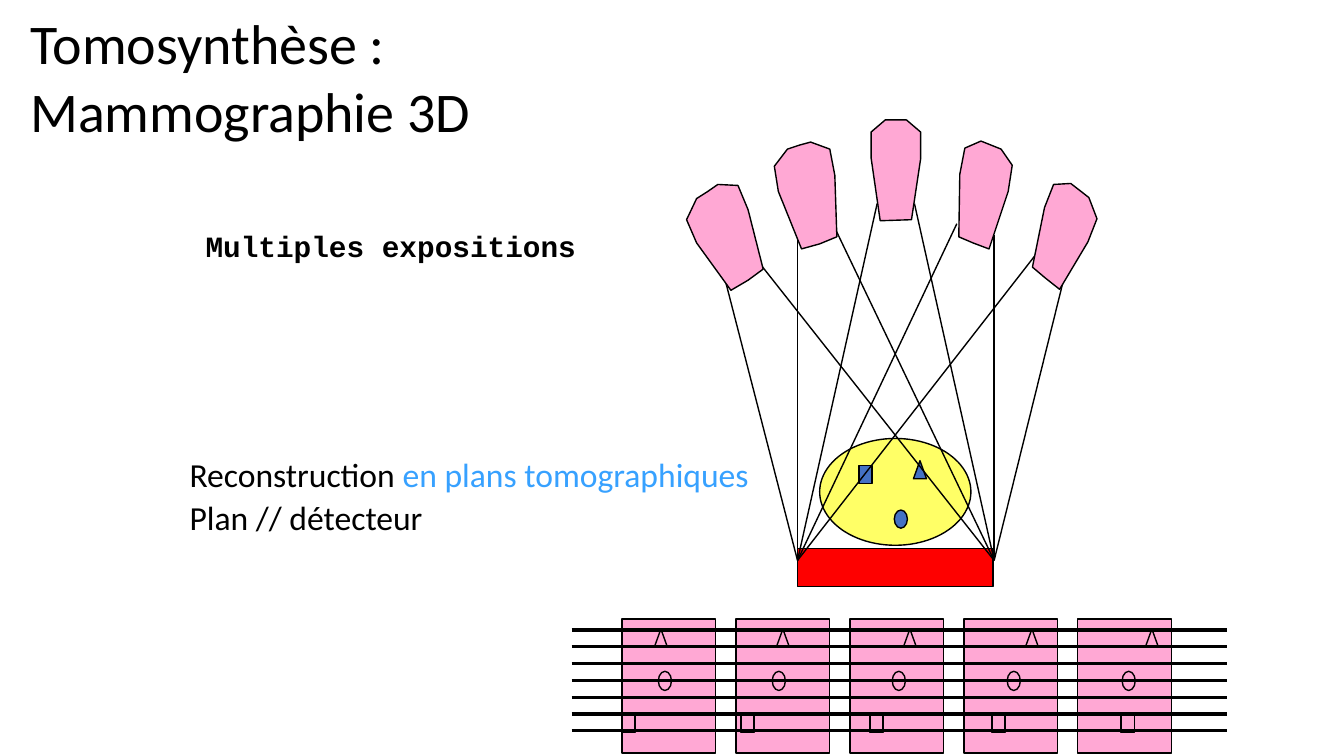
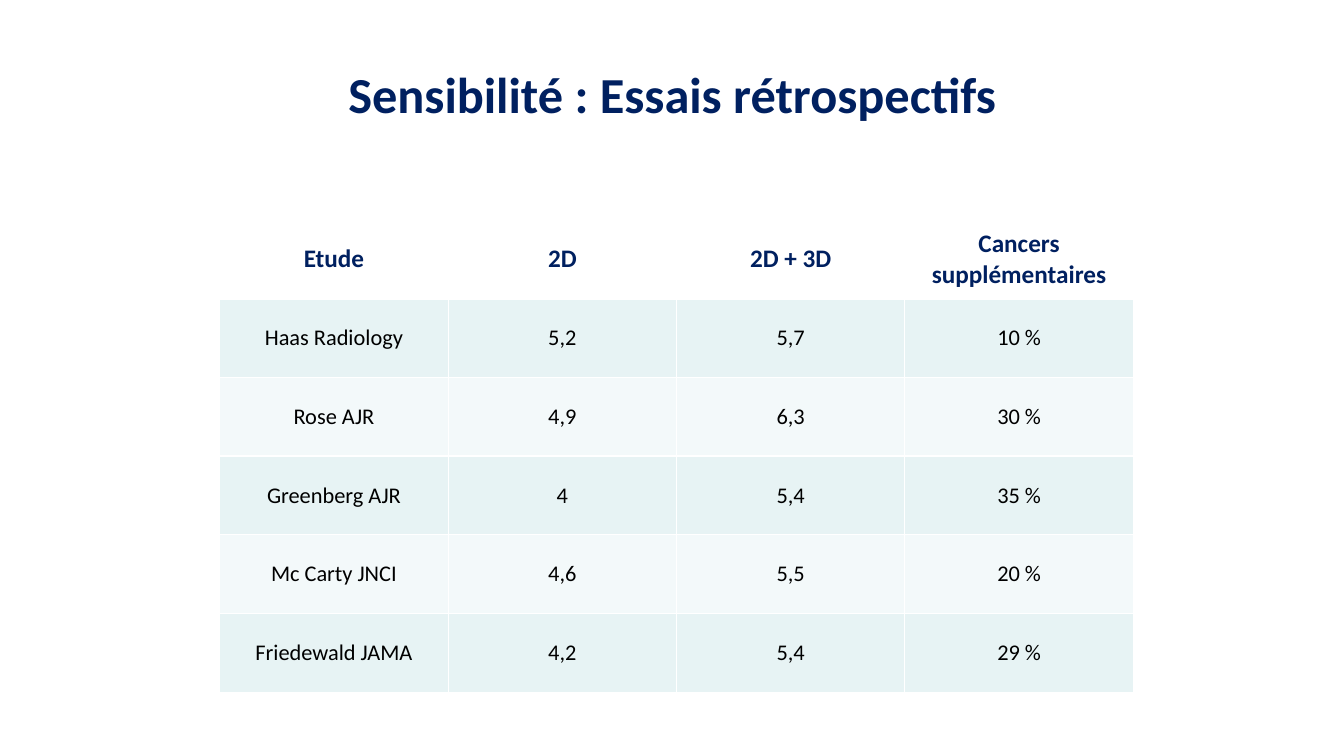
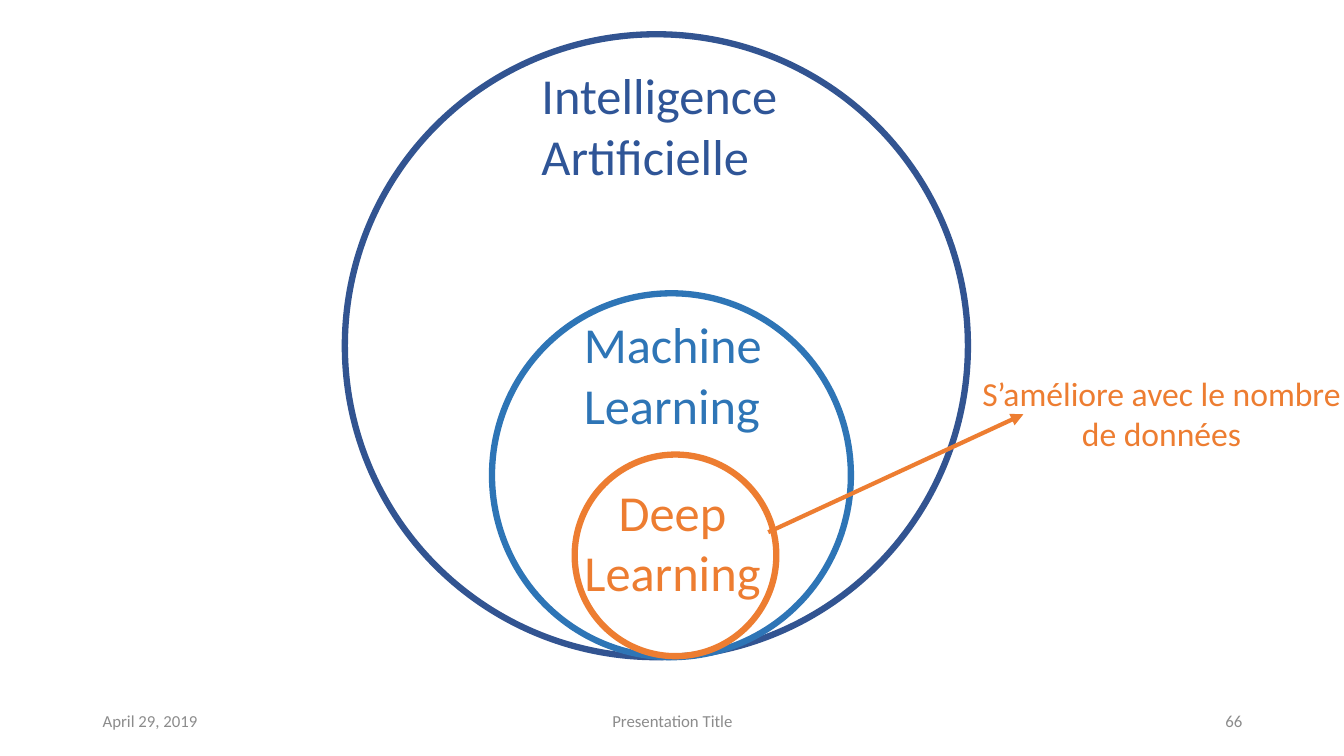
from lxml import etree
from pptx import Presentation
from pptx.dml.color import RGBColor
from pptx.enum.shapes import MSO_CONNECTOR, MSO_SHAPE
from pptx.enum.text import MSO_ANCHOR, MSO_AUTO_SIZE, PP_ALIGN
from pptx.oxml.ns import qn
from pptx.util import Inches, Pt

LEFT, CENTER, RIGHT = PP_ALIGN.LEFT, PP_ALIGN.CENTER, PP_ALIGN.RIGHT
TOP, MIDDLE = MSO_ANCHOR.TOP, MSO_ANCHOR.MIDDLE
RECT, OVAL, TRIANGLE = MSO_SHAPE.RECTANGLE, MSO_SHAPE.OVAL, MSO_SHAPE.ISOSCELES_TRIANGLE
STRAIGHT = MSO_CONNECTOR.STRAIGHT
NO_AUTOFIT = MSO_AUTO_SIZE.NONE

FONT, MONO = "Calibri", "Courier New"
COLORS = {
    "black": "000000", "white": "FFFFFF", "navy": "002060", "sky": "37A1FF",
    "pink": "FFA8D4", "yellow": "FFFF66", "red": "FE0000", "lesion": "4472C4",
    "row_odd": "E7F3F4", "row_even": "F3F9FA", "grey": "8C8C8C",
    "ai_ring": "325491", "ai_text": "2F5597", "ml": "2E75B6", "dl": "ED7D31",
}
TITLE_ONLY, TITLE_BODY, BLANK = 5, 1, 6

EXPOSURES = [
    ([(1.42, 1.78), (1.25, 1.88), (0.91, 1.41), (0.81, 1.18), (0.91, 0.97), (1.02, 0.9),
      (1.12, 0.83), (1.32, 0.84), (1.42, 1.08), (1.57, 1.67)], (1.18, 1.73), (1.47, 1.53)),
    ([(2.13, 1.42), (1.95, 1.47), (1.72, 0.9), (1.68, 0.65), (1.81, 0.48), (1.93, 0.44),
      (2.04, 0.41), (2.23, 0.48), (2.28, 0.74), (2.3, 1.35)], (1.91, 1.35), (2.27, 1.24)),
    ([(2.73, 1.19), (2.64, 0.57), (2.64, 0.31), (2.78, 0.19),
      (2.99, 0.19), (3.13, 0.31), (3.13, 0.58), (3.04, 1.18)], (2.7, 1.02), (3.07, 1.02)),
    ([(3.65, 1.41), (3.81, 1.47), (4.0, 0.9), (4.04, 0.64), (3.93, 0.48), (3.83, 0.44),
      (3.73, 0.4), (3.57, 0.47), (3.52, 0.73), (3.51, 1.35)], (3.49, 1.22), (3.86, 1.33)),
    ([(4.37, 1.76), (4.51, 1.87), (4.79, 1.4), (4.88, 1.17), (4.8, 0.96), (4.71, 0.89),
      (4.62, 0.82), (4.45, 0.83), (4.36, 1.06), (4.24, 1.65)], (4.27, 1.53), (4.56, 1.73)),
]
FILM_MARKS = [
    (0.32, 0.36, 0), (0.4, 0.36, 0.05), (0.53, 0.42, 0.2), (0.61, 0.43, 0.28), (0.67, 0.44, 0.43),
]
STUDIES = [
    ["Etude", "2D", "2D + 3D", "Cancers\nsupplémentaires"],
    ["Haas Radiology", "5,2", "5,7", "10 %"],
    ["Rose AJR", "4,9", "6,3", "30 %"],
    ["Greenberg AJR", "4", "5,4", "35 %"],
    ["Mc Carty JNCI", "4,6", "5,5", "20 %"],
    ["Friedewald JAMA", "4,2", "5,4", "29 %"],
]
RINGS = [
    ((3.42, 0.34, 6.18, 6.18), "ai_ring", (5.37, 0.64, 3.9, 1.21),
     "Intelligence Artificielle", "ai_text", LEFT),
    ((4.88, 2.91, 3.56, 3.61), "ml", (5.79, 3.11, 2.34, 1.21), "Machine Learning", "ml", LEFT),
    ((5.7, 4.51, 2, 2), "dl", (5.5, 4.77, 2.34, 1.21), "Deep Learning", "dl", CENTER),
]


def rgb(name):
    """Return the named colour."""
    return RGBColor.from_string(COLORS[name])


def place(sp, box):
    """Move and size a shape to a box in inches."""
    sp.left, sp.top, sp.width, sp.height = [Inches(v) for v in box]


def add_run(p, text, size, color, bold=False, font=FONT):
    """Append one formatted run."""
    r = p.add_run()
    r.text = text
    r.font.name, r.font.size, r.font.bold = font, Pt(size), bold
    r.font.color.rgb = rgb(color)


def write(tf, lines, size, color, align=LEFT, bold=False, font=FONT):
    """Fill a text frame with one paragraph per line."""
    for i, line in enumerate(lines):
        p = tf.paragraphs[0] if i == 0 else tf.add_paragraph()
        p.alignment = align
        add_run(p, line, size, color, bold, font)


def add_title(s, box, text, size, color, align=LEFT, bold=False):
    """Move the title placeholder to a box and fill it."""
    sp = s.shapes.title
    place(sp, box)
    tf = sp.text_frame
    tf.word_wrap, tf.auto_size, tf.vertical_anchor = True, NO_AUTOFIT, MIDDLE
    write(tf, [text], size, color, align, bold)


def add_text(s, box, lines, size, color, align=LEFT, anchor=TOP, inset=0.0, **style):
    """Add a wrapped text box."""
    tf = s.shapes.add_textbox(*[Inches(v) for v in box]).text_frame
    tf.word_wrap, tf.vertical_anchor = True, anchor
    tf.margin_left = tf.margin_right = Inches(inset)
    tf.margin_top = tf.margin_bottom = Inches(inset / 2)
    write(tf, lines, size, color, align, **style)
    return tf


def style_shape(sp, fill, line="black", width=1.0):
    """Set fill and outline and drop the shadow."""
    sp.shadow.inherit = False
    if fill:
        sp.fill.solid()
        sp.fill.fore_color.rgb = rgb(fill)
    else:
        sp.fill.background()
    sp.line.color.rgb = rgb(line)
    sp.line.width = Pt(width)


def add_shape(s, kind, box, fill, line="black", width=1.0):
    """Add a preset shape in a box."""
    sp = s.shapes.add_shape(kind, *[Inches(v) for v in box])
    style_shape(sp, fill, line, width)


def add_line(s, start, end, color="black", width=1.0, arrow=False):
    """Add a straight line, with an arrowhead at its end if asked."""
    sp = s.shapes.add_connector(STRAIGHT, *[Inches(v) for v in (*start, *end)])
    sp.line.color.rgb = rgb(color)
    sp.line.width = Pt(width)
    if arrow:
        etree.SubElement(sp.line._get_or_add_ln(), qn("a:tailEnd"), type="triangle")
    etree.SubElement(sp._element.spPr, qn("a:effectLst"))


def add_tube(s, points):
    """Add one X-ray tube outline."""
    start, *rest = [(Inches(x), Inches(y)) for x, y in points]
    builder = s.shapes.build_freeform(*start, scale=1.0)
    builder.add_line_segments(rest, close=True)
    style_shape(builder.convert_to_shape(), "pink")


def add_acquisition(s, left, top):
    """Draw breast, detector, beams and tubes from a top left corner."""
    for kind, (x, y, w, h), fill in [
        (OVAL, (2.13, 3.35, 1.5, 1.06), "yellow"),
        (RECT, (1.91, 4.44, 1.94, 0.38), "red"),
        (TRIANGLE, (3.06, 3.57, 0.13, 0.18), "lesion"),
        (RECT, (2.52, 3.62, 0.13, 0.18), "lesion"),
        (OVAL, (2.87, 4.06, 0.13, 0.18), "lesion"),
    ]:
        add_shape(s, kind, (left + x, top + y, w, h), fill)
    for outline, *beams in EXPOSURES:
        for (x, y), edge in zip(beams, (1.91, 3.86)):
            add_line(s, (left + x, top + y), (left + edge, top + 4.56))
        add_tube(s, [(left + x, top + y) for x, y in outline])


def add_films(s, left, top, width):
    """Draw the five projections crossed by seven plane lines."""
    for i, (tri, oval, square) in enumerate(FILM_MARKS):
        x = left + 0.5 + 1.13 * i
        add_shape(s, RECT, (x, top, 0.93, 1.33), "pink")
        add_shape(s, TRIANGLE, (x + tri, top + 0.1, 0.13, 0.18), "pink")
        add_shape(s, RECT, (x + square, top + 0.95, 0.13, 0.18), "pink")
        add_shape(s, OVAL, (x + oval, top + 0.52, 0.13, 0.19), "pink")
    for i in range(7):
        y = top + 0.11 + i / 6
        add_line(s, (left, y), (left + width, y), width=2.25)


def add_body(s, box):
    """Fill the body placeholder with the reconstruction lines."""
    sp = s.placeholders[1]
    place(sp, box)
    tf = sp.text_frame
    tf.word_wrap, tf.auto_size, tf.vertical_anchor = True, NO_AUTOFIT, TOP
    lines = [[("Reconstruction ", "black"), ("en plans tomographiques", "sky")],
             [("Plan // détecteur", "black")]]
    for i, runs in enumerate(lines):
        p = tf.add_paragraph() if i else tf.paragraphs[0]
        pPr = p._p.get_or_add_pPr()
        pPr.set("marL", "0")
        pPr.set("indent", "0")
        etree.SubElement(pPr, qn("a:buNone"))
        p.line_spacing = 0.9
        p.space_before = Pt(5 if i else 0)
        for text, color in runs:
            add_run(p, text, 24, color)


def set_borders(cell, top, bottom):
    """Give a cell white borders."""
    tcPr = cell._tc.get_or_add_tcPr()
    for i, (side, width) in enumerate([("L", 1), ("R", 1), ("T", top), ("B", bottom)]):
        ln = etree.Element(qn(f"a:ln{side}"), w=str(Pt(width)))
        fill = etree.SubElement(ln, qn("a:solidFill"))
        etree.SubElement(fill, qn("a:srgbClr"), val=COLORS["white"])
        tcPr.insert(i, ln)


def add_studies(s, box):
    """Add the table of studies in a box."""
    n_rows, n_cols = len(STUDIES), len(STUDIES[0])
    table = s.shapes.add_table(n_rows, n_cols, *[Inches(v) for v in box]).table
    table.first_row = table.horz_banding = False
    for i, values in enumerate(STUDIES):
        head = i == 0
        for j, value in enumerate(values):
            cell = table.cell(i, j)
            cell.vertical_anchor = MIDDLE
            if head:
                cell.fill.background()
            else:
                cell.fill.solid()
                cell.fill.fore_color.rgb = rgb("row_odd" if i % 2 else "row_even")
            write(cell.text_frame, value.split("\n"), 18 if head else 16,
                  "navy" if head else "black", CENTER, head)
            set_borders(cell, 3 if i == 1 else 1, 3 if head else 1)


def add_footer(s, top):
    """Add date, footer and slide number."""
    for left, width, text, align in [
        (0.92, 3, "April 29, 2019", LEFT),
        (4.42, 4.5, "Presentation Title", CENTER),
        (9.42, 3, "66", RIGHT),
    ]:
        add_text(s, (left, top, width, 0.4), [text], 12, "grey", align, MIDDLE, 0.1)


def tomosynthesis_slide(prs):
    """Build the tomosynthesis slide."""
    s = prs.slides.add_slide(prs.slide_layouts[TITLE_BODY])
    add_title(s, (0.2, 0.13, 6.59, 1.25), "Tomosynthèse : Mammographie 3D", 40, "black")
    add_body(s, (1.78, 4.5, 5.91, 1.31))
    tf = add_text(s, (1.94, 2.25, 4.33, 0.71), ["Multiples expositions"], 21, "black",
                  inset=0.1, bold=True, font=MONO)
    tf.paragraphs[0].line_spacing = 0.9
    add_acquisition(s, 6, 1)
    add_films(s, 5.67, 6.14, 6.5)


def sensitivity_slide(prs):
    """Build the slide with the table of studies."""
    s = prs.slides.add_slide(prs.slide_layouts[TITLE_ONLY])
    add_title(s, (1.67, 0.3, 10, 1.25), "Sensibilité : Essais rétrospectifs", 36, "navy",
              CENTER, True)
    add_studies(s, (2.18, 2.18, 9.06, 4.69))


def learning_slide(prs):
    """Build the slide with the nested circles."""
    s = prs.slides.add_slide(prs.slide_layouts[BLANK])
    add_footer(s, 6.95)
    for ring, line, label, text, color, align in RINGS:
        add_shape(s, OVAL, ring, None, line, 4.5)
        add_text(s, label, [text], 36, color, align)
    add_line(s, (7.62, 5.28), (10.15, 4.11), "dl", 3, arrow=True)
    add_text(s, (9.71, 3.7, 3.62, 0.81), ["S’améliore avec le nombre", "de données"], 24, "dl",
             CENTER)


def main():
    """Build and save the presentation."""
    prs = Presentation()
    prs.slide_width, prs.slide_height = Inches(13.33), Inches(7.5)
    tomosynthesis_slide(prs)
    sensitivity_slide(prs)
    learning_slide(prs)
    prs.save("out.pptx")


if __name__ == "__main__":
    main()
